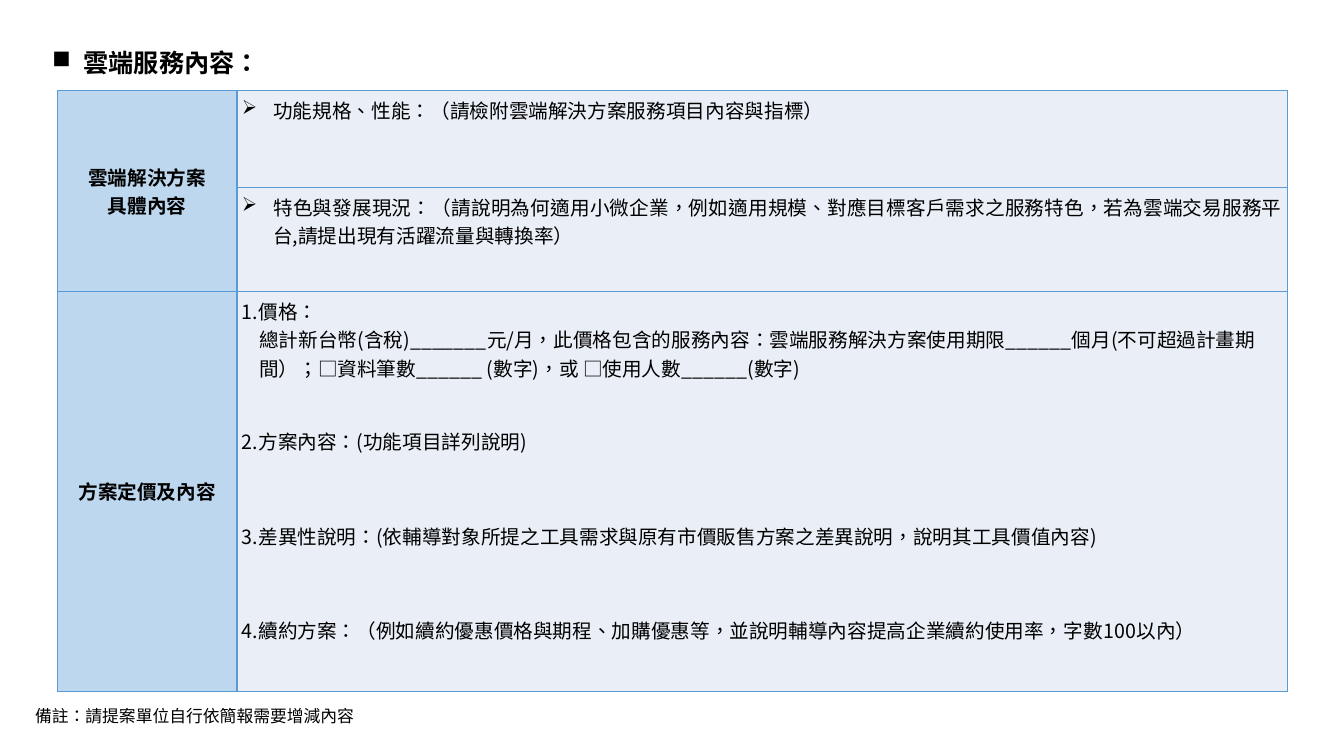
"""Build the cloud service content slide with its solution and pricing table."""
from dataclasses import dataclass

from lxml.etree import SubElement
from pptx import Presentation
from pptx.dml.color import RGBColor
from pptx.enum.text import MSO_ANCHOR, MSO_AUTO_SIZE, PP_ALIGN
from pptx.oxml.ns import qn
from pptx.slide import Slide
from pptx.table import Table, _Cell
from pptx.text.text import TextFrame, _Paragraph
from pptx.util import Emu, Pt

COLORS = {"text": "000000", "border": "5B9BD5", "label": "BDD7EE", "body": "EAEFF7"}
MAIN_FONT = "Noto Sans CJK SC"
COLON_FONT = "Noto Sans CJK TC"
EMU_PER_PX = 9144
HANGING = 31
PRICE_INDENT = 17
CELL_MARGIN = 5
COLUMN_WIDTHS = (178, 1042)
ROW_HEIGHTS = (96, 103, 397)


@dataclass(frozen=True)
class Span:
    text: str
    font: str = MAIN_FONT


@dataclass(frozen=True)
class Line:
    spans: tuple[Span, ...]
    align: PP_ALIGN = PP_ALIGN.JUSTIFY
    bullet: str = ""
    indent: int = 0
    space_before: int = 0
    line_spacing: float = 1.0


@dataclass(frozen=True)
class CellContent:
    row: int
    column: int
    lines: tuple[Line, ...]


@dataclass(frozen=True)
class TextBox:
    left: int
    top: int
    width: int
    height: int
    size: int
    bold: bool
    line: Line


def label(text: str) -> Line:
    return Line((Span(text),), align=PP_ALIGN.CENTER)


def bullet_item(title: str, detail: str) -> Line:
    return Line((Span(title), Span("：", COLON_FONT), Span(detail)), bullet="➢")


def item(text: str, space_before: int = 0) -> Line:
    return Line((Span(text),), space_before=space_before)


BOXES = (
    TextBox(42, 27, 1167, 50, 18, True, Line(
        (Span("雲端服務內容"), Span("：", COLON_FONT)),
        align=PP_ALIGN.LEFT, bullet="■", line_spacing=1.5)),
    TextBox(25, 695, 346, 31, 12, False, Line(
        (Span("備註：請提案單位自行依簡報需要增減內容"),), align=PP_ALIGN.LEFT)),
)

CELLS = (
    CellContent(0, 0, (label("雲端解決方案"), label("具體內容"))),
    CellContent(0, 1, (
        bullet_item("功能規格、性能", "（請檢附雲端解決方案服務項目內容與指標）"),)),
    CellContent(1, 1, (
        bullet_item("特色與發展現況", "（請說明為何適用小微企業，例如適用規模、對應目標客戶"
                    "需求之服務特色，若為雲端交易服務平台,請提出現有活躍流量與轉換率）"),)),
    CellContent(2, 0, (label("方案定價及內容"),)),
    CellContent(2, 1, (
        item("1.價格："),
        Line((Span("總計新台幣(含稅)_______元/月，此價格包含的服務內容："
                   "雲端服務解決方案使用期限______個月(不可超過計畫期間）；"
                   "□資料筆數______ (數字)，或 □使用人數______(數字)"),),
             align=PP_ALIGN.LEFT, indent=PRICE_INDENT),
        item("2.方案內容：(功能項目詳列說明)", 32),
        item("3.差異性說明：(依輔導對象所提之工具需求與原有市價販售方案之差異說明，"
             "說明其工具價值內容)", 47),
        item("4.續約方案：（例如續約優惠價格與期程、加購優惠等，"
             "並說明輔導內容提高企業續約使用率，字數100以內）", 47))),
)


def px(length: int) -> Emu:
    return Emu(length * EMU_PER_PX)


def add_span(para: _Paragraph, text: str, *, font: str, size: int, bold: bool) -> None:
    span = para.add_run()
    span.text = text
    span.font.size = Pt(size)
    span.font.bold = bold
    span.font.color.rgb = RGBColor.from_string(COLORS["text"])
    span.font.name = font
    properties = span._r.get_or_add_rPr()
    properties.set("lang", "zh-TW")
    SubElement(properties, qn("a:ea")).set("typeface", font)


def write_lines(frame: TextFrame, lines: tuple[Line, ...], size: int, bold: bool) -> None:
    frame.word_wrap = True
    for index, line in enumerate(lines):
        para = frame.add_paragraph() if index else frame.paragraphs[0]
        para.alignment = line.align
        para.line_spacing = line.line_spacing
        para.space_before = Pt(line.space_before)
        properties = para._p.get_or_add_pPr()
        properties.set("marL", str(px(HANGING if line.bullet else line.indent)))
        properties.set("indent", str(px(-HANGING if line.bullet else 0)))
        if line.bullet:
            SubElement(properties, qn("a:buChar")).set("char", line.bullet)
        for span in line.spans:
            add_span(para, span.text, font=span.font, size=size, bold=bold)


def add_text_box(page: Slide, content: TextBox) -> None:
    box = page.shapes.add_textbox(
        px(content.left), px(content.top), px(content.width), px(content.height))
    box.text_frame.auto_size = MSO_AUTO_SIZE.SHAPE_TO_FIT_TEXT
    write_lines(box.text_frame, (content.line,), content.size, content.bold)


def style_cell(cell: _Cell, color: str) -> None:
    properties = cell._tc.get_or_add_tcPr()
    for side in ("lnL", "lnR", "lnT", "lnB"):
        border = SubElement(properties, qn(f"a:{side}"), w=str(Pt(1)))
        fill = SubElement(border, qn("a:solidFill"))
        SubElement(fill, qn("a:srgbClr")).set("val", COLORS["border"])
    cell.fill.solid()
    cell.fill.fore_color.rgb = RGBColor.from_string(COLORS[color])
    cell.margin_left = cell.margin_right = px(CELL_MARGIN)
    cell.margin_top = cell.margin_bottom = px(CELL_MARGIN)


def fill_cell(table: Table, content: CellContent) -> None:
    is_label = content.column == 0
    cell = table.cell(content.row, content.column)
    cell.vertical_anchor = MSO_ANCHOR.MIDDLE if is_label else MSO_ANCHOR.TOP
    write_lines(cell.text_frame, content.lines, 14, is_label)


def add_service_table(page: Slide) -> None:
    table = page.shapes.add_table(
        len(ROW_HEIGHTS), len(COLUMN_WIDTHS), px(57), px(90),
        px(sum(COLUMN_WIDTHS)), px(sum(ROW_HEIGHTS))).table
    table.first_row = table.horz_banding = False
    for column, width in zip(table.columns, COLUMN_WIDTHS):
        column.width = px(width)
    for row, height in zip(table.rows, ROW_HEIGHTS):
        row.height = px(height)
        for cell, color in zip(row.cells, ("label", "body")):
            style_cell(cell, color)
    table.cell(0, 0).merge(table.cell(1, 0))
    for content in CELLS:
        fill_cell(table, content)


def main() -> None:
    deck = Presentation()
    deck.slide_width, deck.slide_height = px(1333), px(750)
    page = deck.slides.add_slide(deck.slide_layouts[6])
    add_service_table(page)
    for content in BOXES:
        add_text_box(page, content)
    deck.save("out.pptx")


if __name__ == "__main__":
    main()
